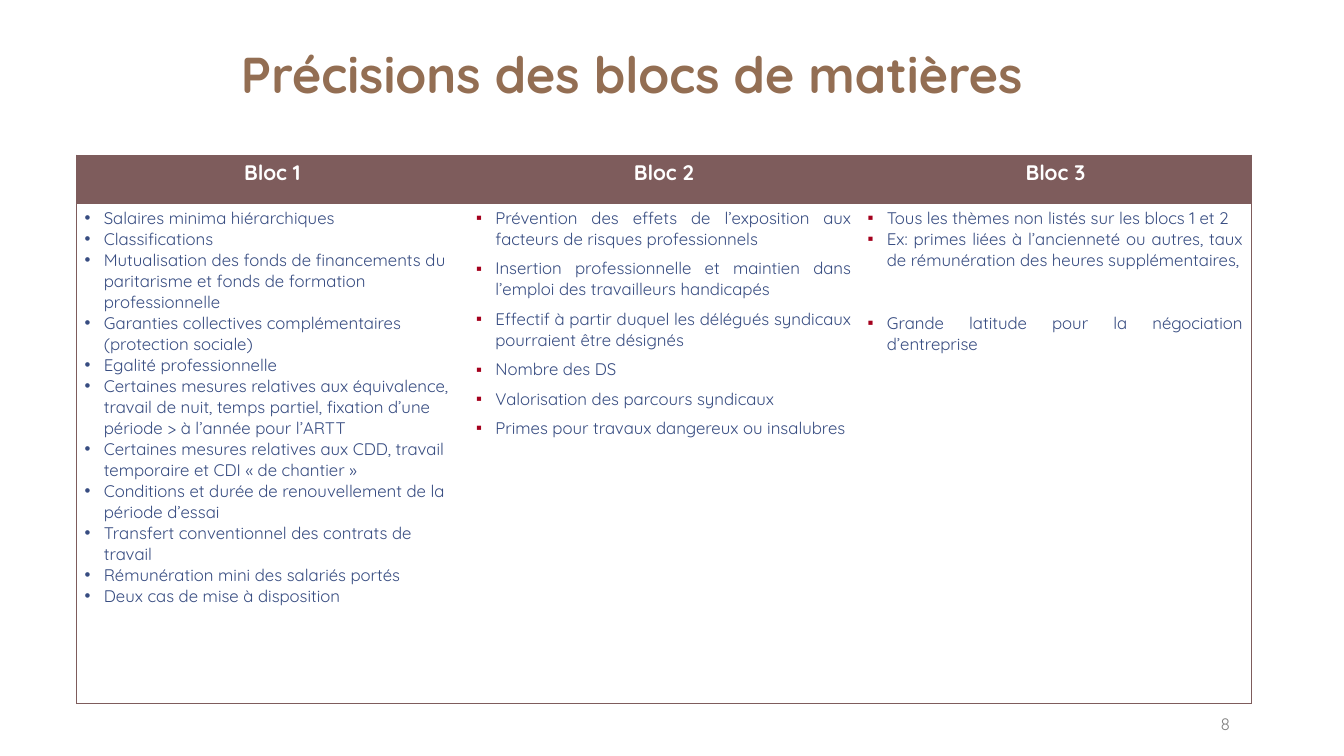
from pptx import Presentation
from pptx.dml.color import RGBColor
from pptx.enum.text import MSO_ANCHOR as Anchor, MSO_AUTO_SIZE as AutoSize, PP_ALIGN as Align
from pptx.oxml.ns import qn
from pptx.util import Inches, Pt
from lxml.etree import SubElement

TITLE_BROWN = RGBColor(0x93, 0x6E, 0x53)
HEADER_BROWN = RGBColor(0x7E, 0x5C, 0x5C)
TEXT_BLUE = RGBColor(0x37, 0x4C, 0x81)
BULLET_RED = RGBColor(0xA4, 0x00, 0x1D)
GREY = RGBColor(0x80, 0x80, 0x80)
WHITE = RGBColor(0xFF, 0xFF, 0xFF)

# Each block: heading, bullet, bullet colour, alignment, items as (text, space before).
BLOCKS = [
    ("Bloc 1", "•", TEXT_BLUE, Align.LEFT, [
        ("Salaires minima hiérarchiques", 0),
        ("Classifications", 0),
        ("Mutualisation des fonds de financements du paritarisme et fonds de "
         "formation professionnelle", 0),
        ("Garanties collectives complémentaires (protection sociale)", 0),
        ("Egalité professionnelle", 0),
        ("Certaines mesures relatives aux équivalence, travail de nuit, temps partiel, "
         "fixation d’une période > à l’année pour l’ARTT", 0),
        ("Certaines mesures relatives aux CDD, travail temporaire et CDI « de chantier »", 0),
        ("Conditions et durée de renouvellement de la période d’essai", 0),
        ("Transfert conventionnel des contrats de travail", 0),
        ("Rémunération mini des salariés portés", 0),
        ("Deux cas de mise à disposition", 0),
    ]),
    ("Bloc 2", "▪", BULLET_RED, Align.JUSTIFY, [
        ("Prévention des effets de l’exposition aux facteurs de risques professionnels", 0),
        ("Insertion professionnelle et maintien dans l’emploi des travailleurs handicapés", 6),
        ("Effectif à partir duquel les délégués syndicaux pourraient être désignés", 6),
        ("Nombre des DS", 6),
        ("Valorisation des parcours syndicaux", 6),
        ("Primes pour travaux dangereux ou insalubres", 6),
    ]),
    ("Bloc 3", "▪", BULLET_RED, Align.JUSTIFY, [
        ("Tous les thèmes non listés sur les blocs 1 et 2", 0),
        ("Ex: primes liées à l’ancienneté ou autres, taux de rémunération des heures "
         "supplémentaires,", 0),
        ("Grande latitude pour la négociation d’entreprise", 30),
    ]),
]


class SlideBuilder:
    font_name = "Quicksand"

    def __init__(self, presentation):
        self.slide = presentation.slides.add_slide(presentation.slide_layouts[5])

    def add_run(self, paragraph, text, size, color, bold=False):
        run = paragraph.add_run()
        run.text = text
        run.font.name = self.font_name
        run.font.size = Pt(size)
        run.font.bold = bold
        run.font.color.rgb = color

    def place_text(self, shape, box, text, size, color, bold=False, align=Align.LEFT):
        shape.left, shape.top, shape.width, shape.height = map(Inches, box)
        frame = shape.text_frame
        frame.word_wrap = True
        frame.auto_size = AutoSize.NONE
        frame.vertical_anchor = Anchor.BOTTOM
        frame.margin_left = frame.margin_right = Inches(0.13)
        frame.margin_top = frame.margin_bottom = Inches(0.07)
        paragraph = frame.paragraphs[0]
        paragraph.alignment = align
        self.add_run(paragraph, text, size, color, bold)
        return paragraph

    def title(self, text, box):
        paragraph = self.place_text(self.slide.shapes.title, box, text, 36, TITLE_BROWN, True)
        paragraph.line_spacing = 0.85

    def page_number(self, text, box):
        shape = self.slide.shapes.add_textbox(*map(Inches, box))
        self.place_text(shape, box, text, 12, GREY, align=Align.RIGHT)

    def format_cell(self, cell, fill, sides):
        """Set margins, fill and a border on the given sides only."""
        cell.margin_left = cell.margin_right = Inches(0.08)
        cell.margin_top = cell.margin_bottom = Inches(0.04)
        properties = cell._tc.get_or_add_tcPr()
        for side in "LRTB":
            line = SubElement(properties, qn(f"a:ln{side}"), w=str(Pt(1)))
            if side in sides:
                solid = SubElement(line, qn("a:solidFill"))
                SubElement(solid, qn("a:srgbClr"), val=str(HEADER_BROWN))
            else:
                SubElement(line, qn("a:noFill"))
        cell.fill.solid()
        cell.fill.fore_color.rgb = fill

    def add_bullet(self, paragraph, character, color):
        properties = paragraph._p.get_or_add_pPr()
        properties.set("marL", str(Inches(0.19)))
        properties.set("indent", str(-Inches(0.19)))
        bullet_color = SubElement(properties, qn("a:buClr"))
        SubElement(bullet_color, qn("a:srgbClr"), val=str(color))
        SubElement(properties, qn("a:buFont"), typeface="Arial")
        SubElement(properties, qn("a:buChar"), char=character)

    def block_table(self, blocks, box, header_height):
        left, top, width, height = map(Inches, box)
        table = self.slide.shapes.add_table(2, len(blocks), left, top, width, height).table
        table.rows[0].height = Inches(header_height)
        table.rows[1].height = height - Inches(header_height)
        for index, (heading, bullet, bullet_color, align, items) in enumerate(blocks):
            sides = "TB" + "L" * (index == 0) + "R" * (index == len(blocks) - 1)
            header, body = table.cell(0, index), table.cell(1, index)
            self.format_cell(header, HEADER_BROWN, sides)
            self.format_cell(body, WHITE, sides)
            paragraph = header.text_frame.paragraphs[0]
            paragraph.alignment = Align.CENTER
            self.add_run(paragraph, heading, 15, WHITE, True)
            frame = body.text_frame
            for number, (text, space_before) in enumerate(items):
                paragraph = frame.add_paragraph() if number else frame.paragraphs[0]
                self.add_bullet(paragraph, bullet, bullet_color)
                paragraph.alignment = align
                if space_before:
                    paragraph.space_before = Pt(space_before)
                self.add_run(paragraph, text, 12, TEXT_BLUE)


def main():
    presentation = Presentation()
    presentation.slide_width = Inches(13.33)
    presentation.slide_height = Inches(7.5)
    builder = SlideBuilder(presentation)
    builder.title("Précisions des blocs de matières", (2.26, 0.44, 9.47, 0.66))
    builder.block_table(BLOCKS, (0.76, 1.54, 11.65, 5.44), 0.48)
    builder.page_number("8", (11.12, 7, 1.21, 0.35))
    presentation.save("out.pptx")


if __name__ == "__main__":
    main()
